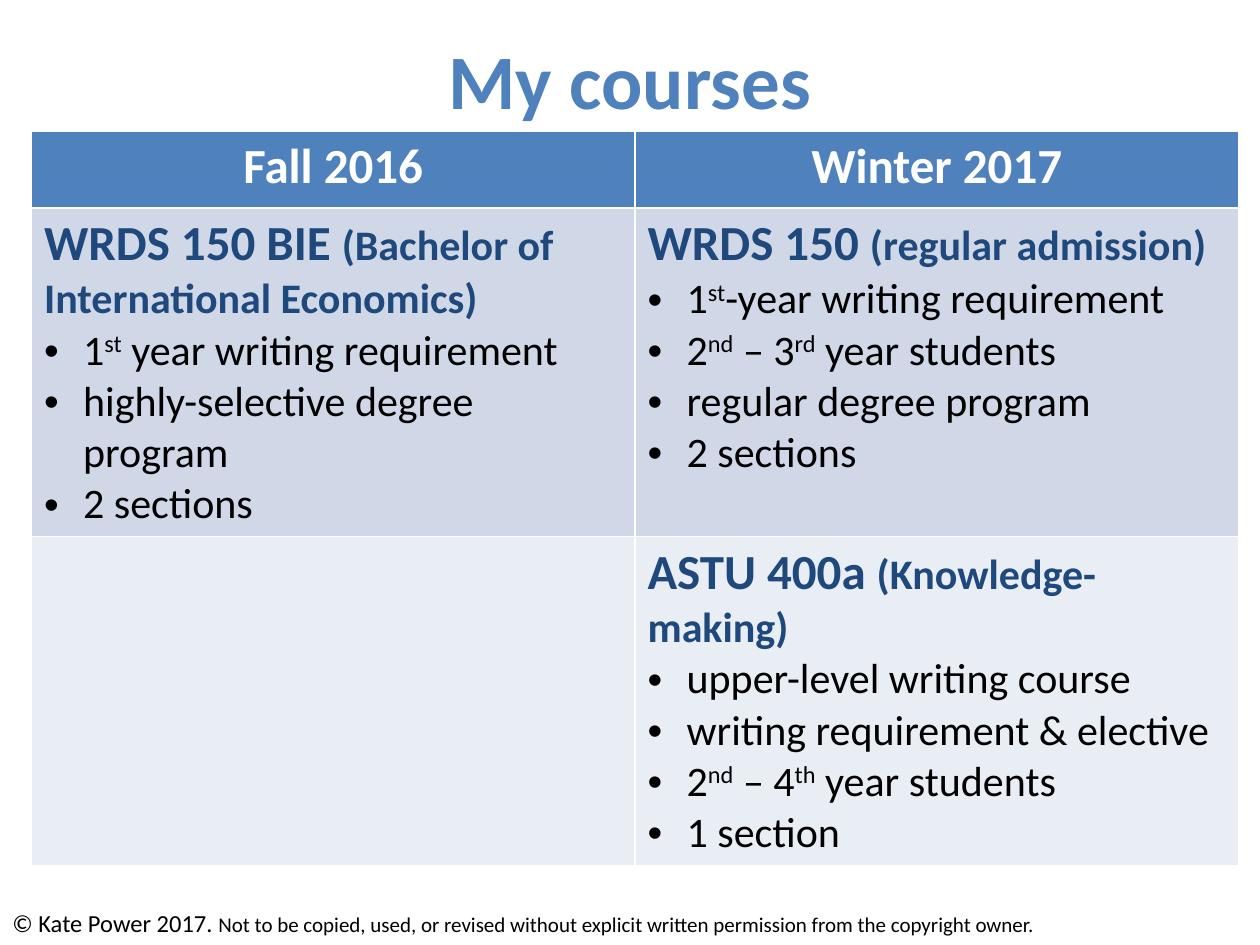
from dataclasses import dataclass

import lxml.etree
import pptx
import pptx.dml.color
import pptx.enum.text
import pptx.oxml.ns
import pptx.util

Inches = pptx.util.Inches
ALIGN = pptx.enum.text.PP_ALIGN
ANCHOR = pptx.enum.text.MSO_ANCHOR


@dataclass(frozen=True)
class Theme:
    font: str = "Calibri"
    accent: str = "4F81BD"
    heading: str = "1F497D"
    ink: str = "000000"
    paper: str = "FFFFFF"
    bands: tuple = ("D0D8E8", "E9EDF4")
    title_size: int = 44
    course_size: int = 28
    body_size: int = 24
    owner_size: int = 14
    notice_size: int = 12


def rgb(value):
    return pptx.dml.color.RGBColor.from_string(value)


class Deck:
    def __init__(self, theme, width, height):
        self.theme = theme
        self.prs = pptx.Presentation()
        self.prs.slide_width = Inches(width)
        self.prs.slide_height = Inches(height)
        self.s = None

    def add_slide(self):
        self.s = self.prs.slides.add_slide(self.prs.slide_layouts[5])

    def run(self, p, text, size, color, bold=False, superscript=False):
        r = p.add_run()
        r.text = text
        r.font.name = self.theme.font
        r.font.size = pptx.util.Pt(size)
        r.font.bold = bold
        r.font.color.rgb = rgb(color)
        if superscript:
            r._r.get_or_add_rPr().set("baseline", "30000")

    def title(self, text, left, top, width, height):
        sp = self.s.shapes.title
        sp.left, sp.top = Inches(left), Inches(top)
        sp.width, sp.height = Inches(width), Inches(height)
        sp.text_frame.vertical_anchor = ANCHOR.MIDDLE
        p = sp.text_frame.paragraphs[0]
        p.alignment = ALIGN.CENTER
        self.run(p, text, self.theme.title_size, self.theme.accent, bold=True)

    def bullet(self, p, text):
        pPr = p._p.get_or_add_pPr()
        pPr.set("marL", str(Inches(0.31)))
        pPr.set("indent", str(Inches(-0.31)))
        qn = pptx.oxml.ns.qn
        lxml.etree.SubElement(pPr, qn("a:buFont")).set("typeface", "Arial")
        lxml.etree.SubElement(pPr, qn("a:buChar")).set("char", "•")
        for i, part in enumerate(text.split("^")):
            self.run(p, part, self.theme.body_size, self.theme.ink, superscript=i % 2 == 1)

    def course(self, cell, code, detail, points):
        t = self.theme
        tf = cell.text_frame
        p = tf.paragraphs[0]
        self.run(p, code + " ", t.course_size, t.heading, bold=True)
        self.run(p, detail, t.body_size, t.heading, bold=True)
        for point in points:
            self.bullet(tf.add_paragraph(), point)

    def course_table(self, terms, rows, left, top, col_width, row_heights):
        t = self.theme
        table = self.s.shapes.add_table(
            len(row_heights), len(terms), Inches(left), Inches(top),
            Inches(col_width * len(terms)), Inches(sum(row_heights))).table
        for column in table.columns:
            column.width = Inches(col_width)
        for row, height, color in zip(table.rows, row_heights, (t.accent, *t.bands)):
            row.height = Inches(height)
            for cell in row.cells:
                cell.fill.solid()
                cell.fill.fore_color.rgb = rgb(color)
        for cell, term in zip(table.rows[0].cells, terms):
            p = cell.text_frame.paragraphs[0]
            p.alignment = ALIGN.CENTER
            self.run(p, term, t.course_size, t.paper, bold=True)
        for i, courses in enumerate(rows, 1):
            for cell, course in zip(table.rows[i].cells, courses):
                if course:
                    self.course(cell, *course)

    def footnote(self, owner, notice, left, top, width, height):
        sp = self.s.shapes.add_textbox(Inches(left), Inches(top), Inches(width), Inches(height))
        tf = sp.text_frame
        tf.word_wrap = True
        tf.auto_size = pptx.enum.text.MSO_AUTO_SIZE.SHAPE_TO_FIT_TEXT
        p = tf.paragraphs[0]
        self.run(p, owner + " ", self.theme.owner_size, self.theme.ink)
        self.run(p, notice, self.theme.notice_size, self.theme.ink)


TERMS = ("Fall 2016", "Winter 2017")
COURSES = (
    (
        ("WRDS 150 BIE", "(Bachelor of International Economics)",
         ("1^st^ year writing requirement", "highly-selective degree program", "2 sections")),
        ("WRDS 150", "(regular admission)",
         ("1^st^-year writing requirement", "2^nd^ – 3^rd^ year students",
          "regular degree program", "2 sections")),
    ),
    (
        None,
        ("ASTU 400a", "(Knowledge-making)",
         ("upper-level writing course", "writing requirement & elective",
          "2^nd^ – 4^th^ year students", "1 section")),
    ),
)


def main():
    deck = Deck(Theme(), 10, 7.5)
    deck.add_slide()
    deck.title("My courses", 0.5, 0, 9, 1.25)
    deck.course_table(TERMS, COURSES, 0.25, 1.04, 4.79, (0.61, 2.47, 1.96))
    deck.footnote(
        "© Kate Power 2017.",
        "Not to be copied, used, or revised without explicit written permission "
        "from the copyright owner.",
        0, 7.16, 9.67, 0.34)
    deck.prs.save("out.pptx")


if __name__ == "__main__":
    main()
